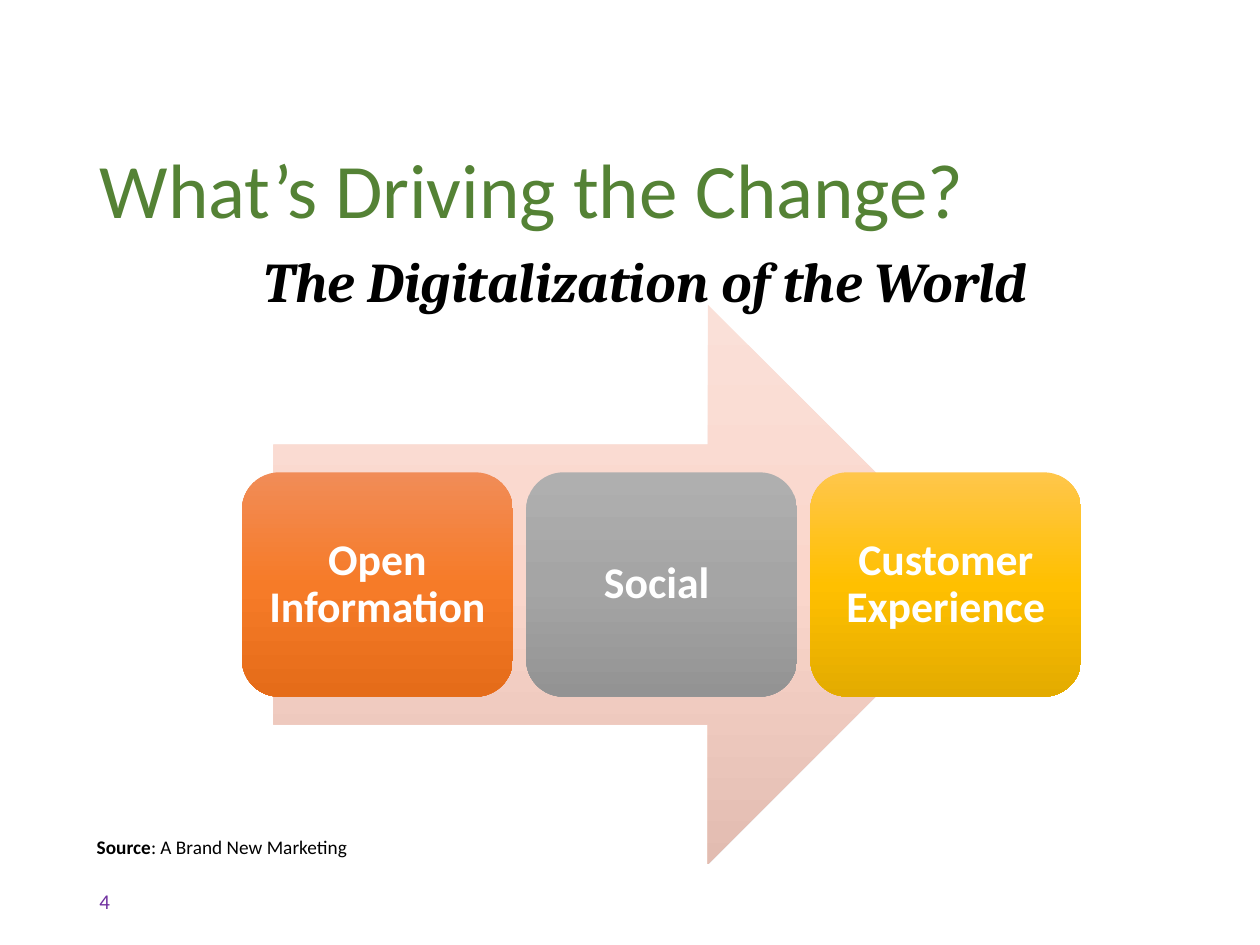
from copy import deepcopy
from dataclasses import dataclass

from pptx import Presentation
from pptx.dml.color import RGBColor
from pptx.enum.shapes import MSO_SHAPE as Shape
from pptx.enum.text import MSO_ANCHOR as Anchor, PP_ALIGN as Align
from pptx.util import Pt


@dataclass(frozen=True)
class Theme:
    body_font: str = "Calibri"
    accent_font: str = "Cambria"
    title_size: int = 44
    subtitle_size: int = 32
    card_size: int = 25
    number_size: int = 12
    source_size: int = 11
    green: str = "548235"
    purple: str = "7030A0"
    black: str = "000000"
    white: str = "FFFFFF"
    arrow: tuple = ("FAE0D8", "FAD6CB", "E2BCB1")
    orange: tuple = ("F18C57", "F67B28", "E56C19")
    gray: tuple = ("AFAFAF", "A5A5A5", "939393")
    gold: tuple = ("FFC64B", "FFC000", "E3AB00")


THEME = Theme()
CARDS = (
    ("Open Information", THEME.orange),
    ("Social ", THEME.gray),
    ("Customer Experience", THEME.gold),
)
CARD_LEFT, CARD_TOP, CARD_PITCH = 138.24, 269.9, 162.4
CARD_WIDTH, CARD_HEIGHT = 154.8, 128.2


def format_span(span, size, color, name=THEME.body_font, bold=False, italic=False):
    font = span.font
    font.name, font.size = name, Pt(size)
    font.bold, font.italic = bold, italic
    font.color.rgb = RGBColor.from_string(color)


def add_title(page, text):
    title = page.shapes.title
    title.left, title.top = Pt(49.7), Pt(33.84)
    title.width, title.height = Pt(620.6), Pt(104.4)
    frame = title.text_frame
    frame.text = text
    frame.word_wrap = True
    frame.vertical_anchor = Anchor.BOTTOM
    para = frame.paragraphs[0]
    para.alignment = Align.LEFT
    para.line_spacing = 0.9
    format_span(para.runs[0], THEME.title_size, THEME.green)


def add_text(page, bounds, text, anchor=Anchor.TOP, align=Align.LEFT, wrap=True):
    box = page.shapes.add_textbox(*map(Pt, bounds))
    frame = box.text_frame
    frame.text = text
    frame.word_wrap = wrap
    frame.vertical_anchor = anchor
    para = frame.paragraphs[0]
    para.alignment = align
    return para


def add_gradient_shape(page, kind, bounds, colors):
    shape = page.shapes.add_shape(kind, *map(Pt, bounds))
    shape.shadow.inherit = False
    shape.line.fill.background()
    fill = shape.fill
    fill.gradient()
    fill.gradient_angle = 270
    stop_list = shape._element.spPr.gradFill.gsLst
    stop_list.insert(1, deepcopy(stop_list[0]))
    for stop, position, color in zip(fill.gradient_stops, (0, 0.5, 1), colors):
        stop.position = position
        stop.color.rgb = RGBColor.from_string(color)
    return shape


def add_card(page, left, text, colors):
    bounds = (left, CARD_TOP, CARD_WIDTH, CARD_HEIGHT)
    card = add_gradient_shape(page, Shape.ROUNDED_RECTANGLE, bounds, colors)
    frame = card.text_frame
    frame.text = text
    frame.word_wrap = True
    frame.vertical_anchor = Anchor.MIDDLE
    frame.margin_left = frame.margin_right = Pt(7.2)
    frame.margin_top = frame.margin_bottom = Pt(7.2)
    para = frame.paragraphs[0]
    para.alignment = Align.CENTER
    para.line_spacing = 0.9
    format_span(para.runs[0], THEME.card_size, THEME.white, bold=True)


def main():
    deck = Presentation()
    deck.slide_width, deck.slide_height = Pt(720), Pt(540)
    page = deck.slides.add_slide(deck.slide_layouts.get_by_name("Title Only"))

    add_title(page, "What’s Driving the Change?")

    number = add_text(page, (49.7, 500.4, 162, 28.8), "4", anchor=Anchor.MIDDLE)
    format_span(number.runs[0], THEME.number_size, THEME.purple)

    subtitle = add_text(page, (108, 137.5, 522, 46),
                        "The Digitalization of the World", align=Align.CENTER)
    format_span(subtitle.runs[0], THEME.subtitle_size, THEME.black,
                THEME.accent_font, bold=True, italic=True)

    source = add_text(page, (48.2, 473.8, 159, 20.9), "Source", wrap=False)
    source.add_run().text = ": A Brand New Marketing"
    for span, bold in zip(source.runs, (True, False)):
        format_span(span, THEME.source_size, THEME.black, bold=bold)

    add_gradient_shape(page, Shape.RIGHT_ARROW, (156.2, 174.2, 408.2, 319.7),
                       THEME.arrow)
    for index, (text, colors) in enumerate(CARDS):
        add_card(page, CARD_LEFT + index * CARD_PITCH, text, colors)

    deck.save("out.pptx")


if __name__ == "__main__":
    main()
